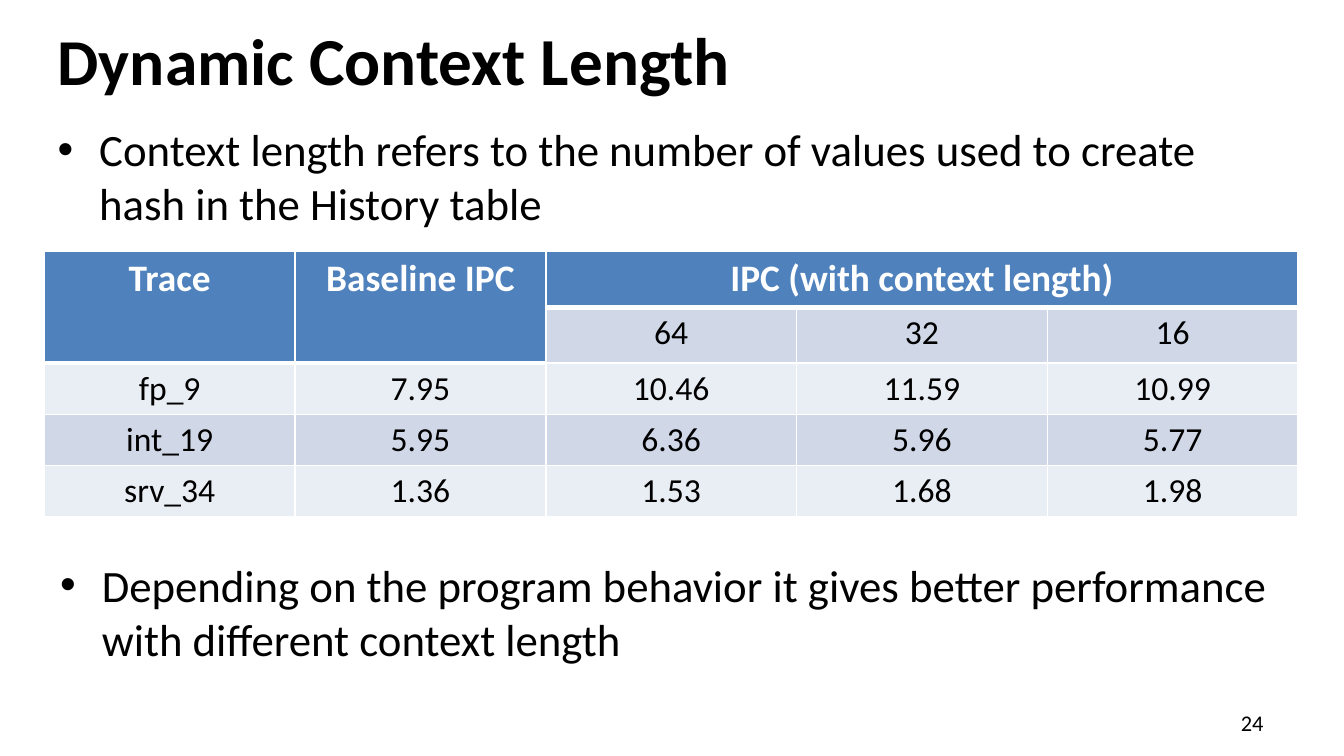
from dataclasses import dataclass

from lxml import etree
from pptx import Presentation
from pptx import util as u
from pptx.dml.color import RGBColor
from pptx.enum import text
from pptx.oxml import ns


@dataclass(frozen=True)
class Theme:
    font: str = "Calibri"
    bullet_font: str = "Arial"
    ink: str = "000000"
    paper: str = "FFFFFF"
    header: str = "4F81BD"
    bands: tuple = ("E9EDF4", "D0D8E8")
    title_size: float = 36
    title_lead_size: float = 35.1
    body_size: float = 24
    header_size: float = 20
    cell_size: float = 18
    number_size: float = 12
    thin: float = 1
    thick: float = 3


def place(shape, left, top, width, height):
    shape.left, shape.top = u.Inches(left), u.Inches(top)
    shape.width, shape.height = u.Inches(width), u.Inches(height)


class SlideBuilder:
    def __init__(self, page, theme):
        self.page = page
        self.theme = theme

    def style(self, font, size, color=None, bold=False):
        font.name = self.theme.font
        font.size = u.Pt(size)
        font.bold = bold
        font.color.rgb = RGBColor.from_string(color or self.theme.ink)

    def title(self, lead, rest, *bounds):
        box = self.page.shapes.title
        place(box, *bounds)
        frame = box.text_frame
        frame.word_wrap = True
        frame.auto_size = text.MSO_AUTO_SIZE.NONE
        frame.vertical_anchor = text.MSO_ANCHOR.MIDDLE
        para = frame.paragraphs[0]
        para.alignment = text.PP_ALIGN.LEFT
        sizes = (self.theme.title_lead_size, self.theme.title_size)
        for words, size in zip((lead, rest), sizes):
            span = para.add_run()
            span.text = words
            self.style(span.font, size, bold=True)

    def text_box(self, words, size, *bounds):
        box = self.page.shapes.add_textbox(*map(u.Inches, bounds))
        frame = box.text_frame
        frame.word_wrap = True
        para = frame.paragraphs[0]
        para.text = words
        self.style(para.font, size)
        return frame

    def bullet(self, words, *bounds):
        frame = self.text_box(words, self.theme.body_size, *bounds)
        frame.auto_size = text.MSO_AUTO_SIZE.SHAPE_TO_FIT_TEXT
        props = frame.paragraphs[0]._p.get_or_add_pPr()
        indent = u.Inches(0.31)
        props.set("marL", str(indent))
        props.set("indent", str(-indent))
        face = etree.Element(ns.qn("a:buFont"), typeface=self.theme.bullet_font)
        mark = etree.Element(ns.qn("a:buChar"), char="•")
        props.insert(0, face)
        props.insert(1, mark)

    def page_number(self, number, *bounds):
        frame = self.text_box(number, self.theme.number_size, *bounds)
        frame.vertical_anchor = text.MSO_ANCHOR.MIDDLE
        frame.paragraphs[0].alignment = text.PP_ALIGN.RIGHT

    def borders(self, cell, bottom):
        props = cell._tc.get_or_add_tcPr()
        for side in "LRTB":
            width = bottom if side == "B" else self.theme.thin
            line = etree.SubElement(props, ns.qn(f"a:ln{side}"), w=str(u.Pt(width)))
            fill = etree.SubElement(line, ns.qn("a:solidFill"))
            etree.SubElement(fill, ns.qn("a:srgbClr"), val=self.theme.paper)

    def cell(self, cell, words, fill, header):
        theme = self.theme
        self.borders(cell, theme.thick if header else theme.thin)
        cell.fill.solid()
        cell.fill.fore_color.rgb = RGBColor.from_string(fill)
        cell.margin_left = cell.margin_right = u.Inches(0.1)
        cell.margin_top = cell.margin_bottom = u.Pt(2.7)
        para = cell.text_frame.paragraphs[0]
        para.text = words
        para.alignment = text.PP_ALIGN.CENTER
        if header:
            self.style(para.font, theme.header_size, theme.paper, bold=True)
        else:
            self.style(para.font, theme.cell_size)

    def table(self, rows, merges, *bounds):
        """Draw rows; each merge is a pair of (row, column) corners in the header."""
        shape = self.page.shapes.add_table(len(rows), len(rows[0]), *map(u.Inches, bounds))
        table = shape.table
        headers = set()
        for (top, left), (bottom, right) in merges:
            table.cell(top, left).merge(table.cell(bottom, right))
            headers.update((r, c) for r in range(top, bottom + 1) for c in range(left, right + 1))
        for r, row in enumerate(rows):
            for c, words in enumerate(row):
                header = (r, c) in headers
                fill = self.theme.header if header else self.theme.bands[r % 2]
                self.cell(table.cell(r, c), words, fill, header)


def main():
    deck = Presentation()
    deck.slide_width = u.Inches(10)
    deck.slide_height = deck.slide_width * 9 // 16
    page = deck.slides.add_slide(deck.slide_layouts[5])
    slide = SlideBuilder(page, Theme())
    left, width = 0.33, 9.33

    slide.title("Dynamic", " Context Length", left, 0.06, width, 0.75)
    slide.table(
        [
            ["Trace", "Baseline IPC", "IPC (with context length)", "", ""],
            ["", "", "64", "32", "16"],
            ["fp_9", "7.95", "10.46", "11.59", "10.99"],
            ["int_19", "5.95", "6.36", "5.96", "5.77"],
            ["srv_34", "1.36", "1.53", "1.68", "1.98"],
        ],
        [((0, 0), (1, 0)), ((0, 1), (1, 1)), ((0, 2), (0, 4))],
        left, 1.87, width, 1.91,
    )
    slide.page_number("24", 7.17, 5.25, 2.33, 0.26)
    slide.bullet(
        "Context length refers to the number of values used to create hash in the History table",
        left, 0.86, width, 0.91,
    )
    slide.bullet(
        "Depending on the program behavior it gives better performance with different context length",
        0.35, 4.1, width, 0.91,
    )
    deck.save("out.pptx")


if __name__ == "__main__":
    main()
